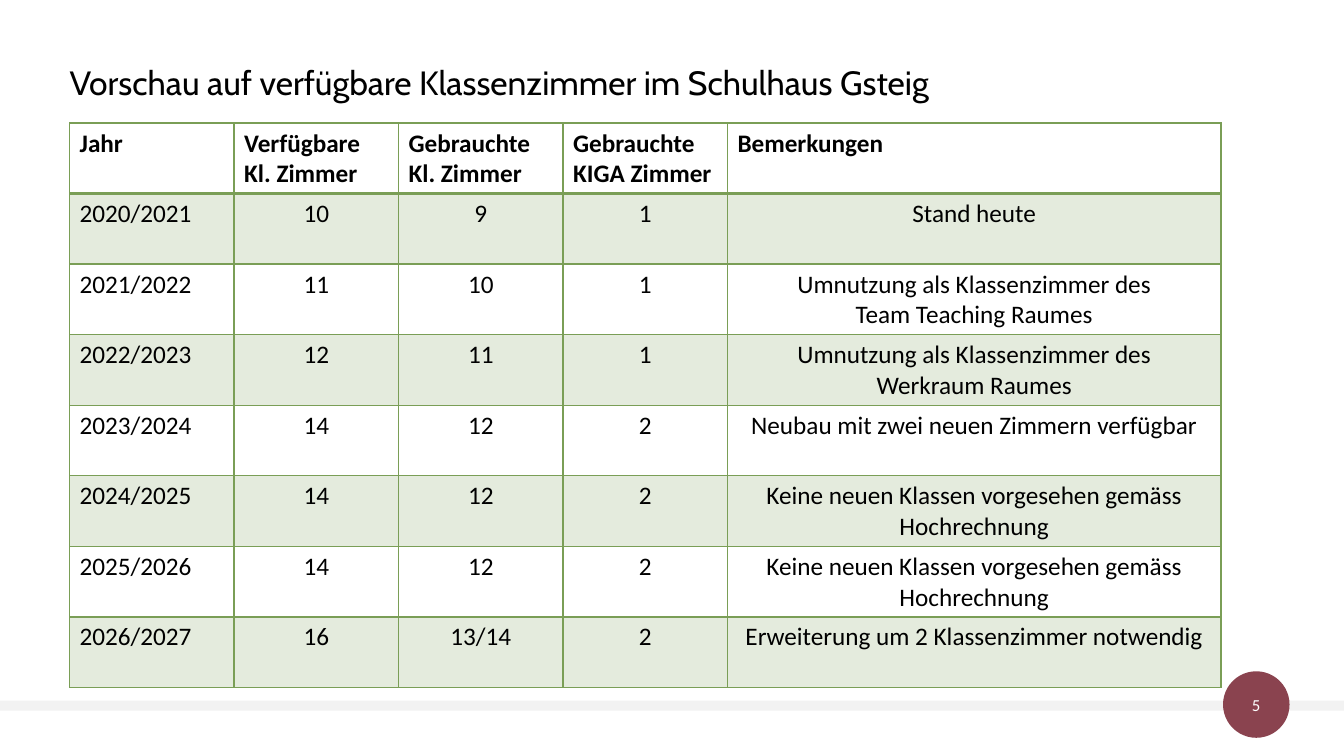
from dataclasses import dataclass

from lxml import etree
from pptx import Presentation
from pptx import util as u
from pptx.dml.color import RGBColor
from pptx.enum import shapes, text
from pptx.oxml import ns

SLIDE_WIDTH = u.Inches(13.33)
SLIDE_HEIGHT = u.Inches(7.5)


@dataclass(frozen=True)
class Theme:
    heading_font: str = "Cabin"
    body_font: str = "Calibri"
    ink: str = "000000"
    paper: str = "FFFFFF"
    band: str = "F2F2F2"
    badge: str = "8A434F"
    green: str = "7A9E56"
    stripe_opacity: int = 20
    title_size: int = 24
    table_size: int = 18
    number_size: int = 12
    rule: int = 1
    header_rule: int = 2


@dataclass(frozen=True)
class Area:
    """Shares of the slide's width and height, in percent."""

    left: float
    top: float
    width: float
    height: float

    def box(self) -> tuple[int, int, int, int]:
        return (
            round(SLIDE_WIDTH * self.left / 100),
            round(SLIDE_HEIGHT * self.top / 100),
            round(SLIDE_WIDTH * self.width / 100),
            round(SLIDE_HEIGHT * self.height / 100),
        )


@dataclass(frozen=True)
class SchoolYear:
    year: str
    available: str
    used: str
    kindergarten: str
    remark: str

    def cells(self) -> tuple[str, ...]:
        return (self.year, self.available, self.used, self.kindergarten, self.remark)


THEME = Theme()
BAND_AREA = Area(0, 92.67, 100, 1.33)
BADGE_AREA = Area(91, 88.8, 4.95, 8.8)
TITLE_AREA = Area(5.18, 8.13, 88.75, 12.13)
TABLE_AREA = Area(5.18, 16.27, 85.67, 74.6)
COLUMN_SPANS = (1, 1, 1, 1, 3)

HEADER = SchoolYear(
    "Jahr",
    "Verfügbare\nKl. Zimmer",
    "Gebrauchte\nKl. Zimmer",
    "Gebrauchte\nKIGA Zimmer",
    "Bemerkungen",
)
YEARS = (
    SchoolYear("2020/2021", "10", "9", "1", "Stand heute"),
    SchoolYear("2021/2022", "11", "10", "1", "Umnutzung als Klassenzimmer des\vTeam Teaching Raumes"),
    SchoolYear("2022/2023", "12", "11", "1", "Umnutzung als Klassenzimmer des\vWerkraum Raumes"),
    SchoolYear("2023/2024", "14", "12", "2", "Neubau mit zwei neuen Zimmern verfügbar"),
    SchoolYear("2024/2025", "14", "12", "2", "Keine neuen Klassen vorgesehen gemäss Hochrechnung"),
    SchoolYear("2025/2026", "14", "12", "2", "Keine neuen Klassen vorgesehen gemäss Hochrechnung"),
    SchoolYear("2026/2027", "16", "13/14", "2", "Erweiterung um 2 Klassenzimmer notwendig"),
)


def format_text(text_frame, font: str, size: int, color: str, bold: bool = False, align=None) -> None:
    for paragraph in text_frame.paragraphs:
        paragraph.alignment = align
        for run in paragraph.runs:
            run.font.name = font
            run.font.size = u.Pt(size)
            run.font.bold = bold
            run.font.color.rgb = RGBColor.from_string(color)


def draw_shape(slide, kind, area: Area, color: str):
    shape = slide.shapes.add_shape(kind, *area.box())
    shape.shadow.inherit = False
    shape.fill.solid()
    shape.fill.fore_color.rgb = RGBColor.from_string(color)
    shape.line.fill.background()
    return shape


def draw_badge(slide, number: str) -> None:
    badge = draw_shape(slide, shapes.MSO_SHAPE.OVAL, BADGE_AREA, THEME.badge)
    text_frame = badge.text_frame
    text_frame.margin_left = text_frame.margin_right = 0
    text_frame.margin_top = text_frame.margin_bottom = 0
    text_frame.vertical_anchor = text.MSO_ANCHOR.MIDDLE
    text_frame.text = number
    format_text(text_frame, THEME.body_font, THEME.number_size, THEME.paper, align=text.PP_ALIGN.CENTER)


def draw_title(slide, title: str) -> None:
    text_frame = slide.shapes.add_textbox(*TITLE_AREA.box()).text_frame
    text_frame.word_wrap = True
    text_frame.margin_left = 0
    text_frame.text = title
    text_frame.paragraphs[0].line_spacing = 0.9
    format_text(text_frame, THEME.heading_font, THEME.title_size, THEME.ink)


def set_borders(cell, widths: dict[str, int]) -> None:
    properties = cell._tc.get_or_add_tcPr()
    for side, width in widths.items():
        line = etree.SubElement(properties, ns.qn(f"a:ln{side}"), w=str(u.Pt(width)))
        fill = etree.SubElement(line, ns.qn("a:solidFill"))
        etree.SubElement(fill, ns.qn("a:srgbClr"), val=THEME.green)


def set_fill(cell, striped: bool) -> None:
    if not striped:
        cell.fill.background()
        return
    cell.fill.solid()
    cell.fill.fore_color.rgb = RGBColor.from_string(THEME.green)
    color = cell._tc.tcPr.find(f"{ns.qn('a:solidFill')}/{ns.qn('a:srgbClr')}")
    etree.SubElement(color, ns.qn("a:alpha"), val=str(THEME.stripe_opacity * 1000))


def draw_table(slide, records: tuple[SchoolYear, ...]) -> None:
    left, top, width, height = TABLE_AREA.box()
    table = slide.shapes.add_table(len(records), len(COLUMN_SPANS), left, top, width, height).table
    table.first_row = table.horz_banding = False
    for column, span in zip(table.columns, COLUMN_SPANS):
        column.width = round(width * span / sum(COLUMN_SPANS))
    for row_index, record in enumerate(records):
        is_header = row_index == 0
        borders = {
            "L": THEME.rule,
            "R": THEME.rule,
            "T": THEME.header_rule if row_index == 1 else THEME.rule,
            "B": THEME.header_rule if is_header else THEME.rule,
        }
        for column_index, content in enumerate(record.cells()):
            cell = table.cell(row_index, column_index)
            cell.text_frame.text = content
            centred = not is_header and column_index > 0
            align = text.PP_ALIGN.CENTER if centred else text.PP_ALIGN.LEFT
            format_text(cell.text_frame, THEME.body_font, THEME.table_size, THEME.ink, is_header, align)
            set_borders(cell, borders)
            set_fill(cell, row_index % 2 == 1)


def main() -> None:
    presentation = Presentation()
    presentation.slide_width = SLIDE_WIDTH
    presentation.slide_height = SLIDE_HEIGHT
    slide = presentation.slides.add_slide(presentation.slide_layouts[6])
    draw_shape(slide, shapes.MSO_SHAPE.RECTANGLE, BAND_AREA, THEME.band)
    draw_badge(slide, "5")
    draw_title(slide, "Vorschau auf verfügbare Klassenzimmer im Schulhaus Gsteig")
    draw_table(slide, (HEADER, *YEARS))
    presentation.save("out.pptx")


if __name__ == "__main__":
    main()
